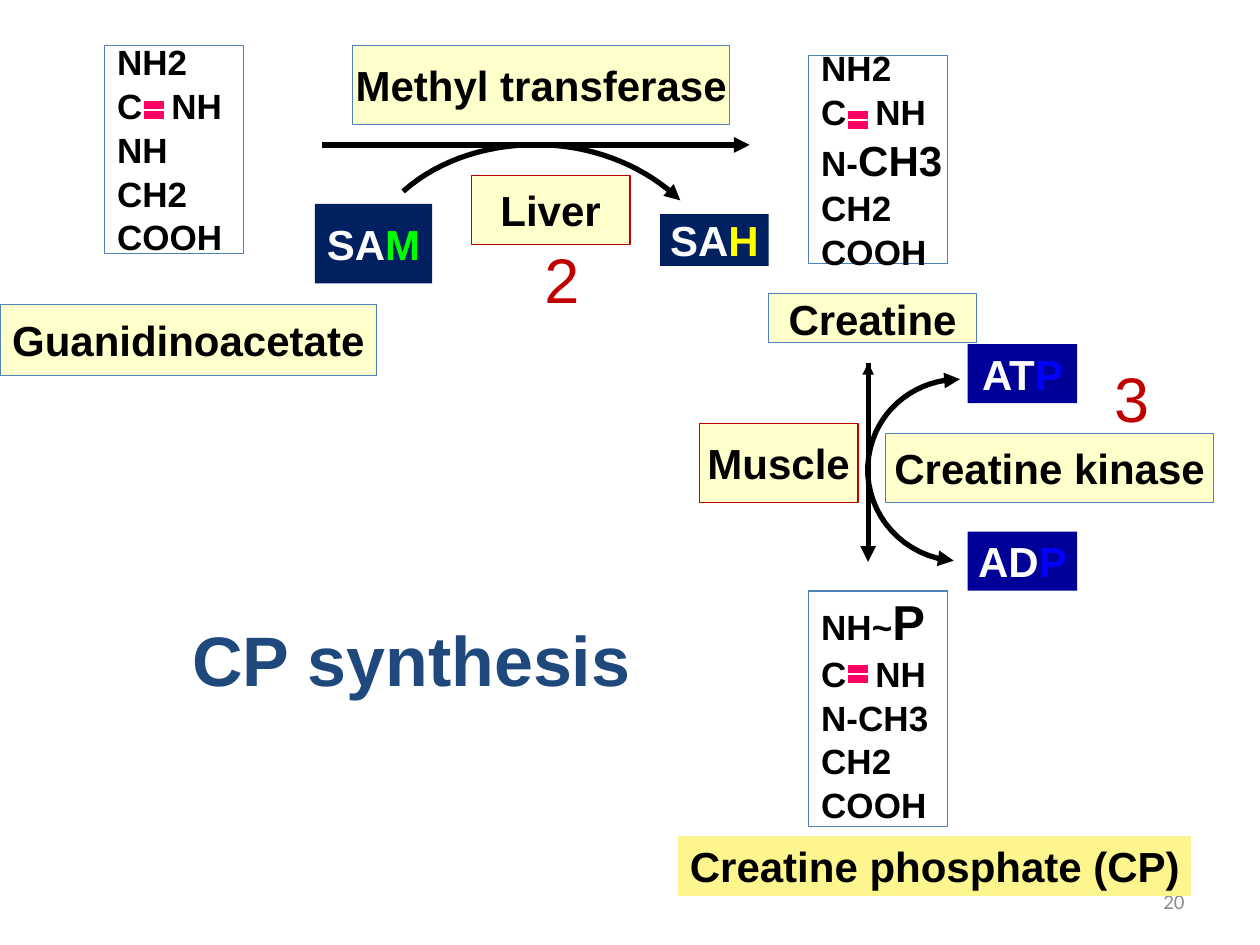
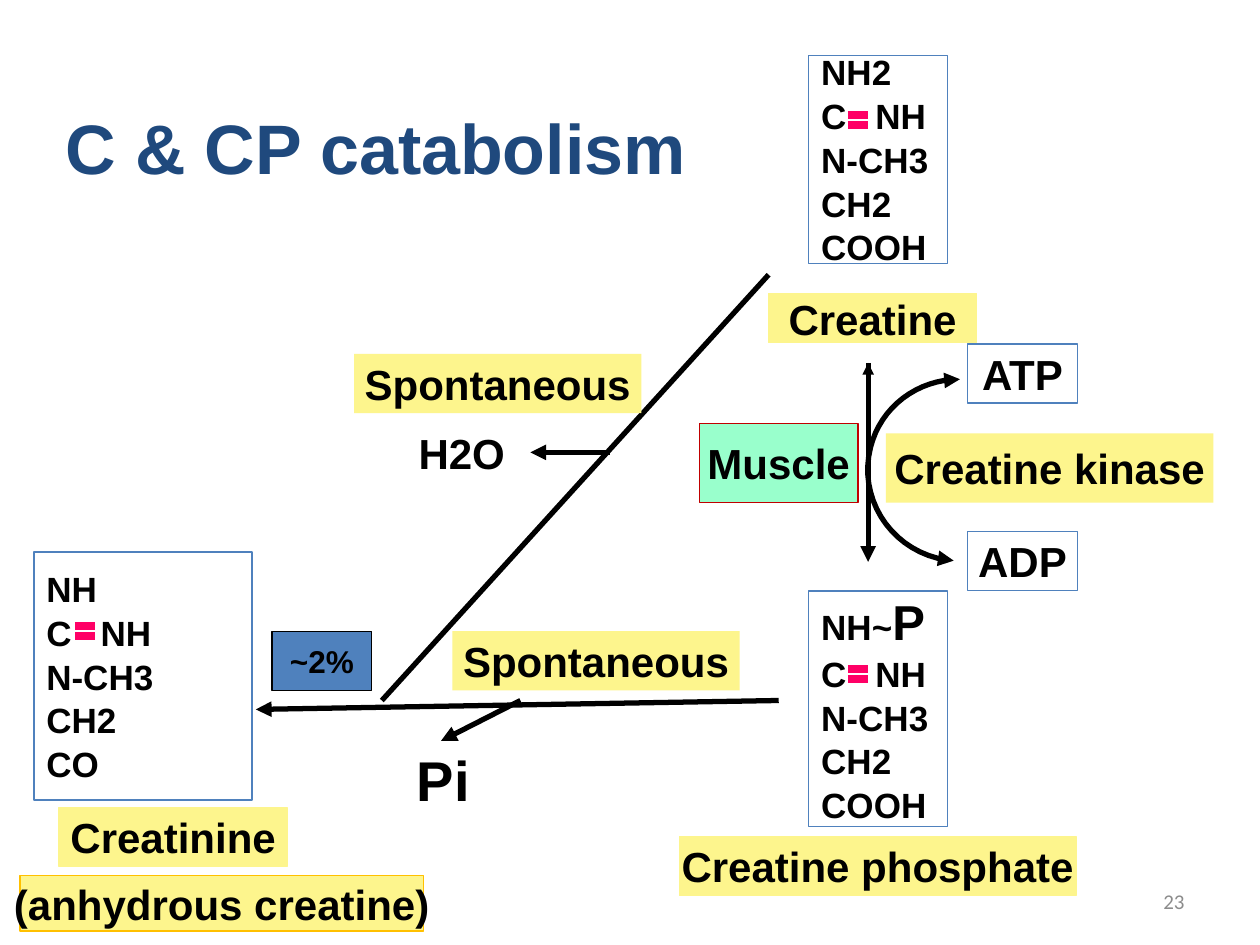
from lxml import etree
from pptx import Presentation
from pptx.dml.color import RGBColor
from pptx.enum import shapes, text
from pptx.oxml import ns
from pptx.util import Pt

BLACK = "000000"
WHITE = "FCFCFC"
BLUE = "4F81BD"
NAVY = "002060"
DARK_BLUE = "000099"
TITLE_BLUE = "1F497D"
RED = "C00000"
PINK = "FF0066"
GREY = "8C8C8C"
CREAM = "FFFFCC"
YELLOW = "FDF58D"
MINT = "99FFCC"

FORMULA_SIZE = (79.2, 118.8)
CREATINE_AT = (462.2, 31.7)
IMINE_ROW = ["C\tNH"]
TAIL_ROWS = [["N-CH3"], ["CH2"], ["COOH"]]
METHYL_ARC = [(388.8, 114.5), (369.4, 95.8), (342, 84.2), (312.5, 82.8),
              (281.5, 81.4), (251.3, 90.7), (230.4, 109.4)]
KINASE_ARC = [(548.6, 216.7), (524.2, 216.7), (503.3, 232.6), (497.5, 255.6),
              (490.3, 283.7), (507.6, 311.8), (535.7, 319),
              (538.6, 319.7), (542.2, 320.4), (545, 320.4)]


def rgb(value):
    return RGBColor.from_string(value)


def points(values):
    return [Pt(value) for value in values]


def write(paragraph, runs, size, color=BLACK, bold=True, font="Arial"):
    for item in runs:
        words, changes = item if isinstance(item, tuple) else (item, {})
        run = paragraph.add_run()
        run.text = words
        run.font.name = font
        run.font.size = Pt(changes.get("size", size))
        run.font.bold = bold
        run.font.color.rgb = rgb(changes.get("color", color))


def set_frame(shape, wrap=False, anchor=text.MSO_ANCHOR.MIDDLE):
    frame = shape.text_frame
    frame.word_wrap = wrap
    frame.auto_size = text.MSO_AUTO_SIZE.NONE
    frame.vertical_anchor = anchor
    return frame


def add_rectangle(slide, box, fill=None, line=None):
    shape = slide.shapes.add_shape(shapes.MSO_SHAPE.RECTANGLE, *points(box))
    shape.shadow.inherit = False
    if fill:
        shape.fill.solid()
        shape.fill.fore_color.rgb = rgb(fill)
    else:
        shape.fill.background()
    if line:
        shape.line.color.rgb = rgb(line)
        shape.line.width = Pt(0.75)
    else:
        shape.line.fill.background()
    return shape


def add_label(slide, box, runs, fill=None, line=None, size=24, color=BLACK):
    shape = add_rectangle(slide, box, fill, line)
    paragraph = set_frame(shape).paragraphs[0]
    paragraph.alignment = text.PP_ALIGN.CENTER
    write(paragraph, runs, size, color)


def add_text(slide, box, words, size, color=BLACK, bold=True, font="Arial",
             align=text.PP_ALIGN.CENTER):
    shape = slide.shapes.add_textbox(*points(box))
    paragraph = set_frame(shape).paragraphs[0]
    paragraph.alignment = align
    write(paragraph, [words], size, color, bold, font)


def add_arrowheads(shape, head, tail):
    line = shape.line._get_or_add_ln()
    for tag, wanted in (("a:headEnd", head), ("a:tailEnd", tail)):
        if wanted:
            etree.SubElement(line, ns.qn(tag), type="triangle")


def add_line(slide, start, end, color=BLACK, width=3, tail=False):
    line = slide.shapes.add_connector(
        shapes.MSO_CONNECTOR.STRAIGHT, *points(start + end))
    line.line.color.rgb = rgb(color)
    line.line.width = Pt(width)
    add_arrowheads(line, False, tail)
    etree.SubElement(line._element.spPr, ns.qn("a:effectLst"))


def curve_points(controls, steps=16):
    result = [controls[0]]
    for first in range(0, len(controls) - 1, 3):
        a, b, c, d = controls[first:first + 4]
        for step in range(1, steps + 1):
            t = step / steps
            weights = ((1 - t) ** 3, 3 * t * (1 - t) ** 2,
                       3 * t ** 2 * (1 - t), t ** 3)
            result.append(tuple(
                sum(weight * value for weight, value in zip(weights, axis))
                for axis in zip(a, b, c, d)))
    return result


def add_curve(slide, controls, head=True, tail=False):
    vertices = [points(vertex) for vertex in curve_points(controls)]
    builder = slide.shapes.build_freeform(*vertices[0])
    builder.add_line_segments(vertices[1:], close=False)
    curve = builder.convert_to_shape()
    curve.shadow.inherit = False
    curve.fill.background()
    curve.line.color.rgb = rgb(BLACK)
    curve.line.width = Pt(3)
    add_arrowheads(curve, head, tail)


def add_formula(slide, at, rows, size=FORMULA_SIZE, bond=(22.3, 34.2)):
    shape = add_rectangle(slide, at + size, line=BLUE)
    frame = set_frame(shape)
    for index, runs in enumerate(rows):
        paragraph = frame.add_paragraph() if index else frame.paragraphs[0]
        paragraph.alignment = text.PP_ALIGN.LEFT
        if index:
            paragraph.space_before = Pt(1)
        if runs is IMINE_ROW:
            tabs = etree.SubElement(
                paragraph._p.get_or_add_pPr(), ns.qn("a:tabLst"))
            etree.SubElement(tabs, ns.qn("a:tab"), pos=str(Pt(31)), algn="l")
        write(paragraph, runs, 20)
    left, top = at[0] + bond[0], at[1] + bond[1]
    for y in (top, top + 5.6):
        add_line(slide, (left, y), (left + 11.5, y), PINK, 4.5)


def add_kinase_reaction(slide, fill, outline, kinase_outline, muscle_fill,
                        product, product_width, nucleotides, nucleotide_style):
    add_label(slide, (439.2, 167.8, 118.8, 28.1), ["Creatine"], fill, outline)
    add_label(slide, (388.1, 478.1, product_width, 33.8), [product],
              YELLOW, YELLOW)
    add_formula(slide, (462.2, 337.7),
                [["NH~", ("P", {"size": 28})], IMINE_ROW] + TAIL_ROWS,
                (79.2, 134.6), (22.3, 44.8))
    add_line(slide, (496.1, 207.4), (496.1, 321.1), tail=True)
    add_line(slide, (496.1, 224.6), (496.1, 207.4), width=2.25, tail=True)
    add_label(slide, (399.6, 241.9, 90.7, 45.4), ["Muscle"], muscle_fill, RED)
    add_curve(slide, KINASE_ARC, tail=True)
    for y, runs in zip((196.6, 303.8), nucleotides):
        add_label(slide, (553, y, 62.6, 33.8), runs, **nucleotide_style)
    add_label(slide, (506.2, 247.7, 187.2, 39.6), ["Creatine kinase"],
              fill, kinase_outline)


def start_slide(presentation, title, box, number):
    slide = presentation.slides.add_slide(presentation.slide_layouts[5])
    shape = slide.shapes.title
    shape.left, shape.top, shape.width, shape.height = points(box)
    frame = set_frame(shape, anchor=text.MSO_ANCHOR.TOP)
    paragraph = frame.paragraphs[0]
    paragraph.alignment = text.PP_ALIGN.CENTER
    write(paragraph, [title], 40, TITLE_BLUE)
    add_text(slide, (516.2, 500.4, 167.8, 28.8), number, 12, GREY, False,
             "Calibri", text.PP_ALIGN.RIGHT)
    return slide


def build_synthesis(presentation):
    slide = start_slide(presentation, "CP synthesis",
                        (101.5, 348.5, 267.1, 55.4), "20")
    add_formula(slide, (59.8, 25.9),
                [["NH2"], IMINE_ROW, ["NH"], ["CH2"], ["COOH"]])
    add_formula(slide, CREATINE_AT,
                [["NH2"], IMINE_ROW, ["N-", ("CH3", {"size": 24})],
                 ["CH2"], ["COOH"]])
    add_line(slide, (184.3, 82.8), (428.4, 82.8), tail=True)
    add_label(slide, (0, 174.2, 215.3, 40.3), ["Guanidinoacetate"],
              CREAM, BLUE)
    add_label(slide, (201.6, 25.9, 215.3, 45.4), ["Methyl transferase"],
              CREAM, BLUE)
    add_curve(slide, METHYL_ARC)
    for box, letter, color in (((180, 116.6, 67, 45.4), "M", "00FF00"),
                               ((377.3, 122.4, 61.9, 29.5), "H", "FFFF00")):
        add_label(slide, box, ["SA", (letter, {"color": color})],
                  NAVY, color=WHITE)
    add_label(slide, (269.3, 100.1, 90.7, 39.6), ["Liver"], CREAM, RED)
    phosphate = ("P", {"color": "0000FF"})
    add_kinase_reaction(slide, CREAM, BLUE, BLUE, CREAM,
                        "Creatine phosphate (CP)", 292.3,
                        (["AT", phosphate], ["AD", phosphate]),
                        {"fill": DARK_BLUE, "color": WHITE})
    for x, y, step in ((303.8, 134.6, "2"), (629.3, 202.3, "3")):
        add_text(slide, (x, y, 34.6, 49), step, 36, RED, False)


def build_catabolism(presentation):
    slide = start_slide(presentation, "C & CP catabolism",
                        (28.1, 56.2, 373, 55.4), "23")
    add_formula(slide, CREATINE_AT, [["NH2"], IMINE_ROW] + TAIL_ROWS)
    add_formula(slide, (19.4, 315.4),
                [["NH"], IMINE_ROW, ["N-CH3"], ["CH2"], ["CO"]],
                (124.6, 141.8), (23.4, 42.5))
    add_kinase_reaction(slide, YELLOW, YELLOW, None, MINT,
                        "Creatine phosphate", 226.8,
                        (["ATP"], ["ADP"]), {"line": BLUE})
    add_line(slide, (445, 400.3), (146.2, 405.4), tail=True)
    add_line(slide, (297.4, 400.3), (252, 423.4), tail=True)
    add_line(slide, (348.5, 258.5), (303.1, 258.5), tail=True)
    add_line(slide, (439.2, 157), (218.2, 400.3))
    for x, y in ((202.3, 202.3), (258.5, 360.7)):
        add_label(slide, (x, y, 164.2, 33.8), ["Spontaneous"], YELLOW)
    add_label(slide, (33.8, 461.5, 130.3, 33.8), ["Creatinine"],
              YELLOW, YELLOW)
    add_label(slide, (11.5, 500.4, 230.4, 31.7), ["(anhydrous creatine)"],
              YELLOW, "FFC000")
    add_label(slide, (155.5, 360.7, 56.9, 33.8), ["~2%"], BLUE, BLACK, 18)
    add_text(slide, (235.4, 241.9, 56.9, 33.8), "H2O", 24)
    add_text(slide, (208.1, 428.4, 90.7, 33.8), "Pi", 32)


def main():
    presentation = Presentation()
    presentation.slide_width = Pt(720)
    presentation.slide_height = Pt(540)
    build_synthesis(presentation)
    build_catabolism(presentation)
    presentation.save("out.pptx")


if __name__ == "__main__":
    main()
